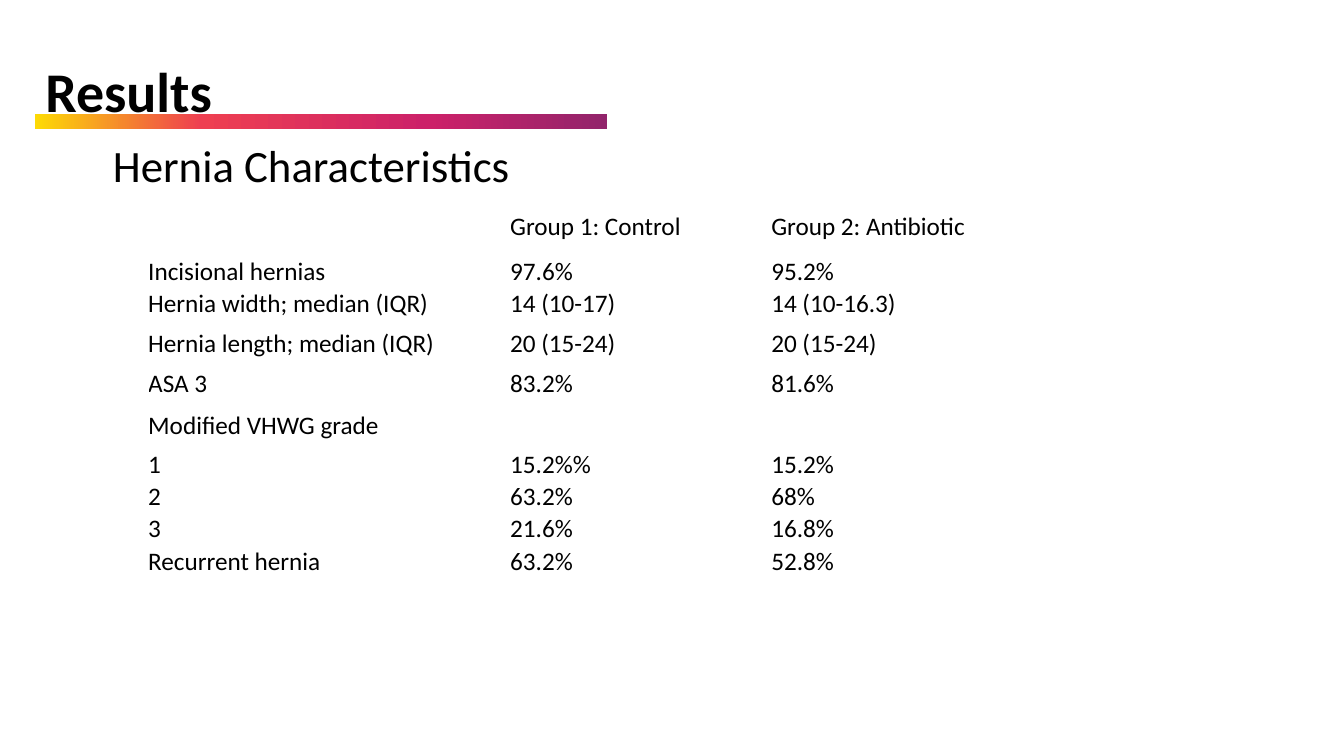
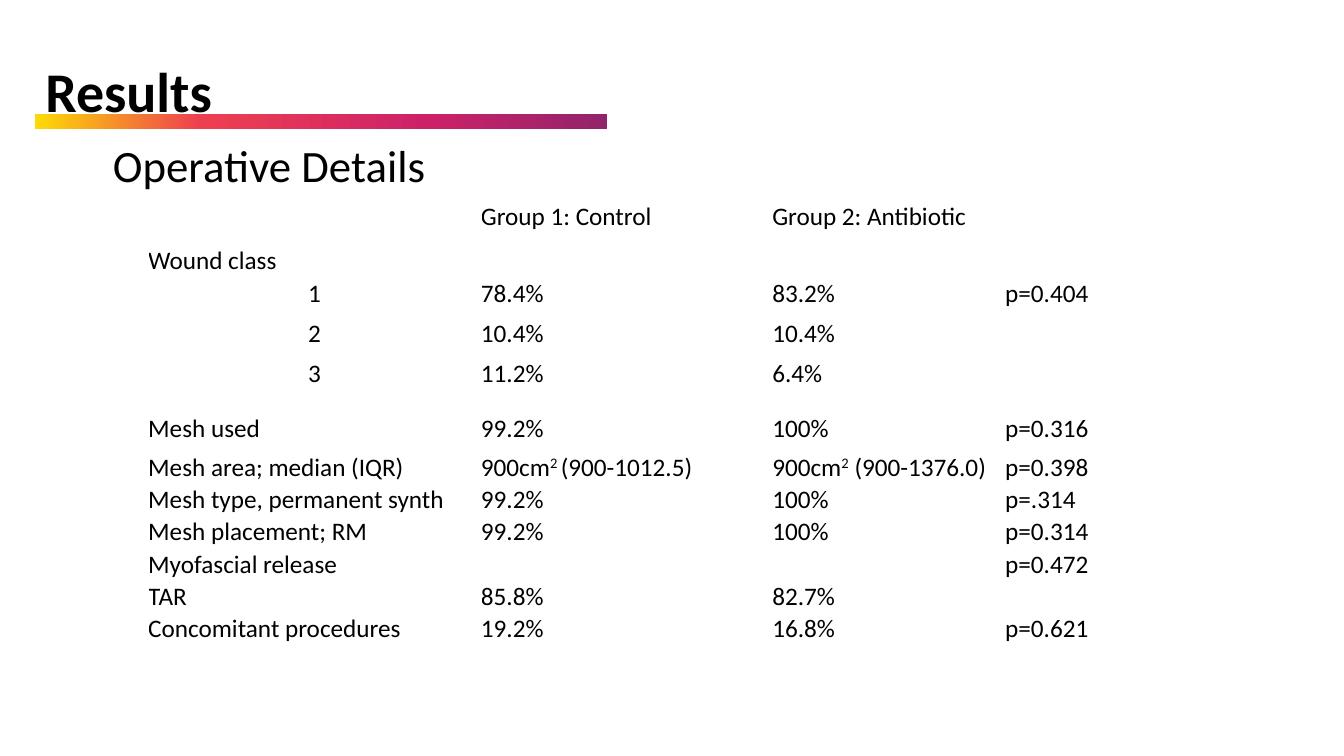
"""Build two result slides, each with a title bar and a table of group values."""
from dataclasses import dataclass

from lxml.etree import SubElement as Sub
from pptx import Presentation
from pptx.dml.color import RGBColor as Rgb
from pptx.enum.shapes import MSO_SHAPE as Shape
from pptx.enum.text import MSO_AUTO_SIZE as Fit, PP_ALIGN as Align
from pptx.oxml import parse_xml
from pptx.oxml.ns import nsdecls, qn
from pptx.util import Pt

PX = 9144


@dataclass(frozen=True)
class Theme:
    font: str = "Calibri"
    ink: str = "000000"
    paper: str = "FFFFFF"
    bar: tuple = ((0, "FDDA05"), (29, "EE3F51"), (69, "CC2169"), (100, "92246B"))
    title: int = 40
    head: int = 32
    body: int = 18
    inset: int = 5


THEME = Theme()
SIZE = (1333, 750)
TITLE = ("Results", (40, 51, 311, 78))
BAR = (35, 113, 567, 15)
HEAD = (107, 132, 435, 64)
LEFT = 147
GROUPS = ("", "Group 1: Control", "Group 2: Antibiotic", "")

SLIDES = [
    {
        "head": "Hernia Characteristics",
        "top": 210,
        "center": (),
        "cols": (359, 259, 231, 223),
        "rows": [
            (44, GROUPS),
            (32, ("Incisional hernias", "97.6%", "95.2%", "")),
            (40, ("Hernia width; median (IQR)", "14 (10-17)", "14 (10-16.3)", "")),
            (40, ("Hernia length; median (IQR)", "20 (15-24)", "20 (15-24)", "")),
            (41, ("ASA 3", "83.2%", "81.6%", "")),
            (39, ("Modified VHWG grade", "", "", "")),
            (32, ("1", "15.2%%", "15.2%", "")),
            (32, ("2", "63.2%", "68%", "")),
            (32, ("3", "21.6%", "16.8%", "")),
            (32, ("Recurrent hernia", "63.2%", "52.8%", "")),
            (32, ("", "", "", "")),
        ],
    },
    {
        "head": "Operative Details",
        "top": 200,
        "center": ("1", "2", "3"),
        "cols": (330, 289, 231, 165),
        "rows": [
            (44, GROUPS),
            (32, ("Wound class", "", "", "")),
            (40, ("1", "78.4%", "83.2%", "p=0.404")),
            (40, ("2", "10.4%", "10.4%", "")),
            (54, ("3", "11.2%", "6.4%", "")),
            (39, ("Mesh used", "99.2%", "100%", "p=0.316")),
            (32, ("Mesh area; median (IQR)", ("900cm", "2 ", "(900-1012.5)"),
                  ("900cm", "2", " (900-1376.0)"), "p=0.398")),
            (32, ("Mesh type, permanent synth", "99.2%", "100%", "p=.314")),
            (32, ("Mesh placement; RM", "99.2%", "100%", "p=0.314")),
            (32, ("Myofascial release", "", "", "p=0.472")),
            (32, ("TAR", "85.8%", "82.7%", "")),
            (32, ("Concomitant procedures", "19.2%", "16.8%", "p=0.621")),
            (32, ("", "", "", "")),
        ],
    },
]


def emu(box):
    return [n * PX for n in box]


def style(para, size, bold=False):
    font = para.font
    font.name, font.size, font.bold = THEME.font, Pt(size), bold
    font.color.rgb = Rgb.from_string(THEME.ink)


def pad(item, gap):
    item.margin_left = item.margin_right = gap * PX
    item.margin_top = item.margin_bottom = gap * PX


def label(slide, text, box, size, bold=False):
    frame = slide.shapes.add_textbox(*emu(box)).text_frame
    frame.word_wrap = True
    frame.auto_size = Fit.SHAPE_TO_FIT_TEXT
    pad(frame, THEME.inset)
    frame.text = text
    style(frame.paragraphs[0], size, bold)


def add_bar(slide):
    bar = slide.shapes.add_shape(Shape.RECTANGLE, *emu(BAR))
    bar.shadow.inherit = False
    bar.line.fill.background()
    bar.fill.gradient()
    bar.fill.gradient_angle = 0
    stops = bar.element.find(".//" + qn("a:gsLst"))
    stops.clear()
    for pos, color in THEME.bar:
        stop = Sub(stops, qn("a:gs"), pos=str(pos * 1000))
        Sub(stop, qn("a:srgbClr"), val=color)


def fill_cell(cell, text, center):
    pad(cell, 0)
    cell.fill.solid()
    cell.fill.fore_color.rgb = Rgb.from_string(THEME.paper)
    props = cell._tc.get_or_add_tcPr()
    for spot, side in enumerate("LRTB"):
        props.insert(spot, parse_xml(
            f'<a:ln{side} {nsdecls("a")} w="{Pt(1)}"><a:solidFill>'
            f'<a:srgbClr val="{THEME.paper}"/></a:solidFill></a:ln{side}>'))
    para = cell.text_frame.paragraphs[0]
    style(para, THEME.body)
    if center:
        para.alignment = Align.CENTER
    parts = (text,) if isinstance(text, str) else text
    for spot, part in enumerate(parts):
        if part:
            run = para.add_run()
            run.text = part
            if spot == 1:
                run._r.get_or_add_rPr().set("baseline", "32000")


def add_grid(slide, data):
    cols, rows = data["cols"], data["rows"]
    box = (LEFT, data["top"], sum(cols), sum(high for high, _ in rows))
    grid = slide.shapes.add_table(len(rows), len(cols), *emu(box)).table
    grid.first_row = grid.horz_banding = False
    for col, wide in zip(grid.columns, cols):
        col.width = wide * PX
    for row, (high, texts) in zip(grid.rows, rows):
        row.height = high * PX
        for cell, text in zip(row.cells, texts):
            fill_cell(cell, text, text in data["center"])


def main():
    deck = Presentation()
    deck.slide_width, deck.slide_height = emu(SIZE)
    for data in SLIDES:
        slide = deck.slides.add_slide(deck.slide_layouts[6])
        label(slide, *TITLE, THEME.title, True)
        add_bar(slide)
        add_grid(slide, data)
        label(slide, data["head"], HEAD, THEME.head)
    deck.save("out.pptx")


if __name__ == "__main__":
    main()
